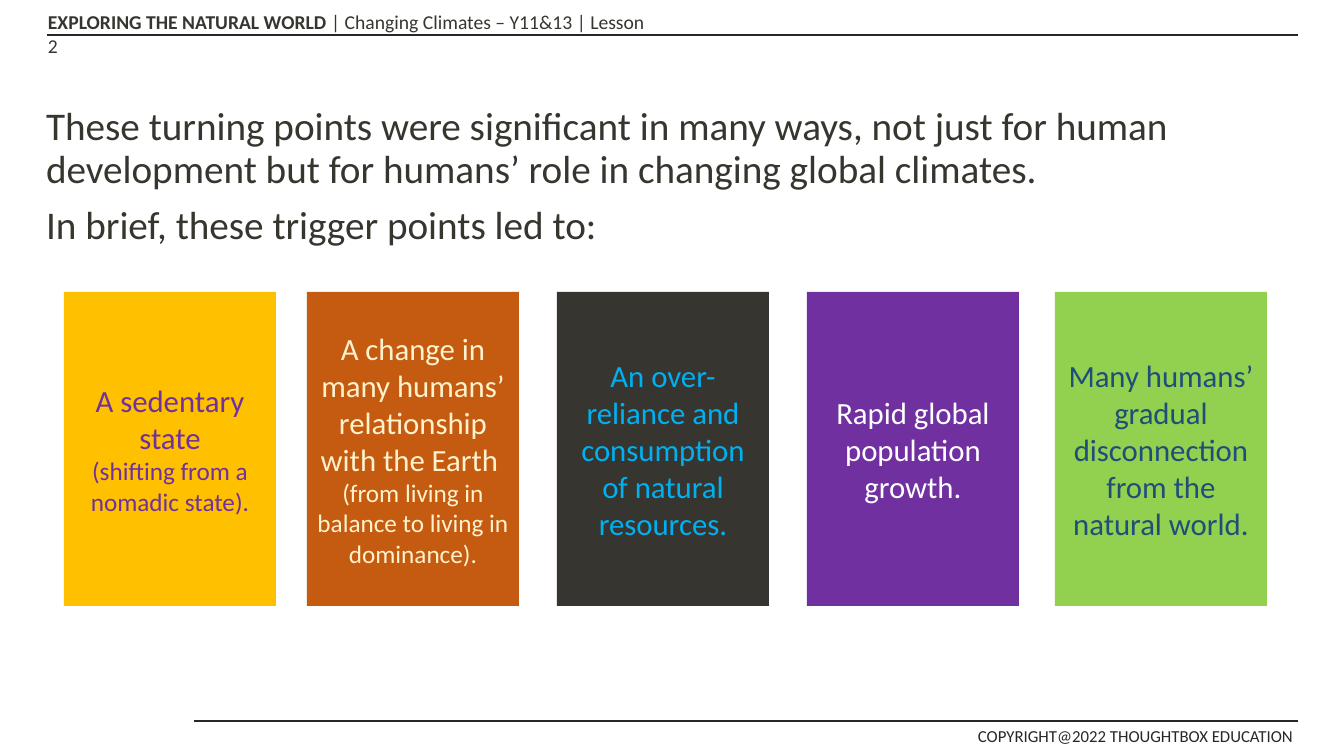
from pptx import Presentation, util as u
from pptx.dml.color import RGBColor
from pptx.enum import shapes, text
from pptx.oxml.ns import qn
from lxml import etree

PX = 9525 * 96 / 100.8  # EMU per px
SLIDE = (1344, 756)
FONT = "Calibri"

COLORS = {
    "rule": "252823", "ink": "35372F", "amber": "FFC000", "rust": "C55A11",
    "charcoal": "37352F", "purple": "7030A0", "green": "92D050",
    "cream": "FFF2CC", "sky": "00B0F0", "white": "FFFFFF", "navy": "1F4E79",
}

# Content
HEADER = [("EXPLORING THE NATURAL WORLD ", True),
          ("| Changing Climates – Y11&13 | Lesson 2", False)]
COPYRIGHT = "COPYRIGHT@2022 THOUGHTBOX EDUCATION"
INTRO = [
    "These turning points were significant in many ways, not just for human "
    "development but for humans’ role in changing global climates.",
    "In brief, these trigger points led to:",
]
# left, fill, font colour, main words, smaller words
CARDS = [
    (64, "amber", "purple", "A sedentary state", "(shifting from a nomadic state)."),
    (307, "rust", "cream", "A change in many humans’ relationship with the Earth ",
     "(from living in balance to living in dominance)."),
    (557, "charcoal", "sky",
     "An over-reliance and consumption of natural resources.", ""),
    (807, "purple", "white", "Rapid global population growth.", ""),
    (1055, "green", "navy",
     "Many humans’ gradual disconnection from the natural world.", ""),
]
CARD_TOP, CARD_W, CARD_H = 292, 212, 314
RULES = [(47, 35, 1298), (194, 721, 1298)]  # left, y, right


def px(*lengths):
    return [u.Emu(round(n * PX)) for n in lengths]


def rgb(name):
    return RGBColor.from_string(COLORS[name])


def add_run(p, words, size, color, bold=False):
    r = p.add_run()
    r.text = words
    r.font.name, r.font.size, r.font.bold = FONT, u.Pt(size), bold
    r.font.color.rgb = rgb(color)


def add_label(s, box):
    tf = s.shapes.add_textbox(*px(*box)).text_frame
    tf.word_wrap = True
    return tf.paragraphs[0]


prs = Presentation()
prs.slide_width, prs.slide_height = px(*SLIDE)
s = prs.slides.add_slide(prs.slide_layouts[1])
title, body = s.placeholders
title.element.getparent().remove(title.element)

# Header and footer
for left, y, right in RULES:
    rule = s.shapes.add_connector(shapes.MSO_CONNECTOR.STRAIGHT, *px(left, y, right, y))
    rule.line.color.rgb = rgb("rule")
    rule.line.width = u.Pt(1)
    etree.SubElement(rule.element.spPr, qn("a:effectLst"))

p = add_label(s, (38, 5, 623, 34))
for words, bold in HEADER:
    add_run(p, words, 14, "ink", bold)
add_run(add_label(s, (968, 721, 343, 31)), COPYRIGHT, 12, "rule")

# Introduction
body.left, body.top, body.width, body.height = px(36, 102, 1308, 521)
tf = body.text_frame
tf.auto_size = text.MSO_AUTO_SIZE.NONE
for i, words in enumerate(INTRO):
    p = tf.add_paragraph() if i else tf.paragraphs[0]
    p.line_spacing = 0.9
    p.space_before = u.Pt(10 if i else 0)
    pPr = p._p.get_or_add_pPr()
    pPr.set("marL", "0")
    pPr.set("indent", "0")
    etree.SubElement(pPr, qn("a:buNone"))
    add_run(p, words, 28, "ink")

# Cards
for left, fill, color, main, detail in CARDS:
    sp = s.shapes.add_shape(shapes.MSO_SHAPE.RECTANGLE, *px(left, CARD_TOP, CARD_W, CARD_H))
    sp.shadow.inherit = False
    sp.fill.solid()
    sp.fill.fore_color.rgb = rgb(fill)
    sp.line.fill.background()
    tf = sp.text_frame
    tf.word_wrap = True
    tf.vertical_anchor = text.MSO_ANCHOR.MIDDLE
    p = tf.paragraphs[0]
    p.alignment = text.PP_ALIGN.CENTER
    add_run(p, main, 22, color)
    if detail:
        p.add_line_break()
        add_run(p, detail, 18, color)

prs.save("out.pptx")
